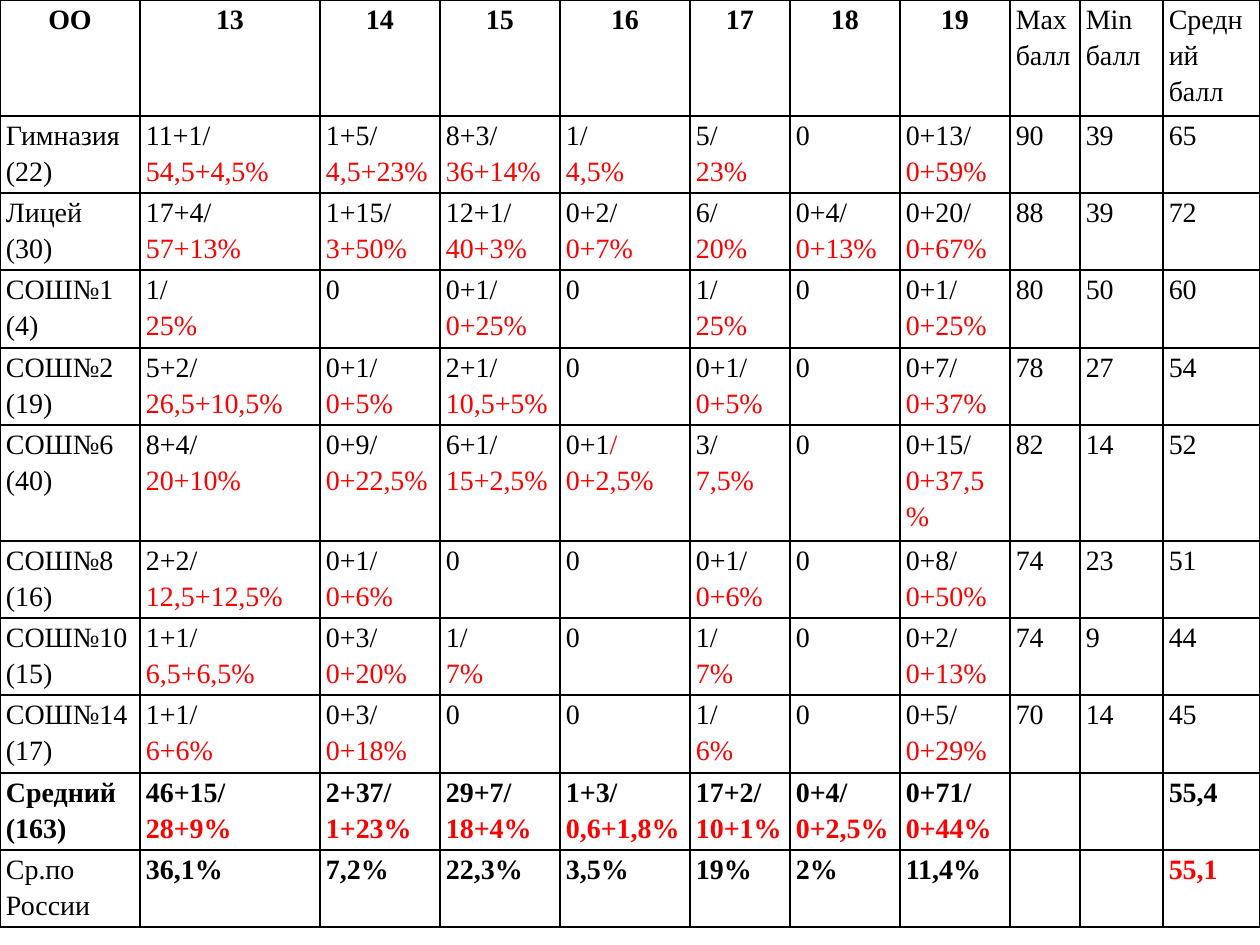
from lxml import etree
from pptx import Presentation
from pptx import util as u
from pptx.dml.color import RGBColor
from pptx.enum import text
from pptx.oxml import ns

PX = 914400 / 126
BLACK, RED = "000000", "FF0000"
COLUMNS = [140, 180, 120, 120, 130, 100, 110, 110, 70, 83, 97]
HEIGHTS = [116, 77, 77, 78, 77, 116, 77, 77, 78, 77, 77]

# A slash ends the count; the share after it goes on a red line of its own.
ROWS = [
    "ОО|13|14|15|16|17|18|19|Max балл|Min балл|Средний балл",
    "Гимназия (22)|11+1/54,5+4,5%|1+5/4,5+23%|8+3/36+14%|1/4,5%|5/23%|0|0+13/0+59%|90|39|65",
    "Лицей (30)|17+4/57+13%|1+15/3+50%|12+1/40+3%|0+2/0+7%|6/20%|0+4/0+13%|0+20/0+67%|88|39|72",
    "СОШ№1 (4)|1/25%|0|0+1/0+25%|0|1/25%|0|0+1/0+25%|80|50|60",
    "СОШ№2 (19)|5+2/26,5+10,5%|0+1/0+5%|2+1/10,5+5%|0|0+1/0+5%|0|0+7/0+37%|78|27|54",
    "СОШ№6 (40)|8+4/20+10%|0+9/0+22,5%|6+1/15+2,5%|0+1/0+2,5%|3/7,5%|0|0+15/0+37,5%|82|14|52",
    "СОШ№8 (16)|2+2/12,5+12,5%|0+1/0+6%|0|0|0+1/0+6%|0|0+8/0+50%|74|23|51",
    "СОШ№10(15)|1+1/6,5+6,5%|0+3/0+20%|1/7%|0|1/7%|0|0+2/0+13%|74|9|44",
    "СОШ№14(17)|1+1/6+6%|0+3/0+18%|0|0|1/6%|0|0+5/0+29%|70|14|45",
    "Средний (163)|46+15/28+9%|2+37/1+23%|29+7/18+4%|1+3/0,6+1,8%|17+2/10+1%|0+4/0+2,5%|0+71/0+44%|||55,4",
    "Ср.по России|36,1%|7,2%|22,3%|3,5%|19%|2%|11,4%|||55,1",
]
LYCEUM, SCHOOL_6, AVERAGE, RUSSIA = 2, 5, 9, 10


def paint(target, color):
    """Give a fill or a font one solid colour."""
    if hasattr(target, "solid"):
        target.solid()
        target.fore_color.rgb = RGBColor.from_string(color)
    else:
        target.color.rgb = RGBColor.from_string(color)


def add_borders(cell):
    """Draw a 1 pt black line on each side; the fill must come after the lines."""
    props = cell._tc.get_or_add_tcPr()
    for place, side in enumerate(("lnL", "lnR", "lnT", "lnB")):
        line = etree.Element(ns.qn("a:" + side), w=str(u.Pt(1)))
        fill = etree.SubElement(line, ns.qn("a:solidFill"))
        etree.SubElement(fill, ns.qn("a:srgbClr"), val=BLACK)
        props.insert(place, line)


deck = Presentation()
deck.slide_width, deck.slide_height = u.Inches(10), u.Inches(7.5)
page = deck.slides.add_slide(deck.slide_layouts[6])

frame = page.shapes.add_table(len(ROWS), len(COLUMNS), 0, 0,
                              round(sum(COLUMNS) * PX), round(sum(HEIGHTS) * PX))
scores = frame.table
for column, width in zip(scores.columns, COLUMNS):
    column.width = round(width * PX)
for row, height in zip(scores.rows, HEIGHTS):
    row.height = round(height * PX)

for r, row in enumerate(ROWS):
    for c, value in enumerate(row.split("|")):
        cell = scores.cell(r, c)
        cell.margin_left = cell.margin_right = round(6 * PX)
        cell.margin_top = cell.margin_bottom = 0
        paint(cell.fill, "FFFFFF")
        add_borders(cell)

        value = value.replace("/", "/\n")
        if (r, c) == (LYCEUM, 0):
            value = value.replace(" ", "\n")
        cell.text_frame.text = value
        for line, para in enumerate(cell.text_frame.paragraphs):
            para.line_spacing = 1.15
            if r == 0 and c < 8:
                para.alignment = text.PP_ALIGN.CENTER
            para.font.name, para.font.size = "Times New Roman", u.Pt(16)
            para.font.bold = (r == 0 and c < 8) or r == AVERAGE or (r == RUSSIA and c > 0)
            is_red = (line == 1 and c > 0) or (r, c) == (RUSSIA, 10)
            paint(para.font, RED if is_red else BLACK)

# School 6, task 16: the slash itself is red too.
para = scores.cell(SCHOOL_6, 4).text_frame.paragraphs[0]
para.runs[0].text = "0+1"
slash = para.add_run()
slash.text = "/"
paint(slash.font, RED)

deck.save("out.pptx")
